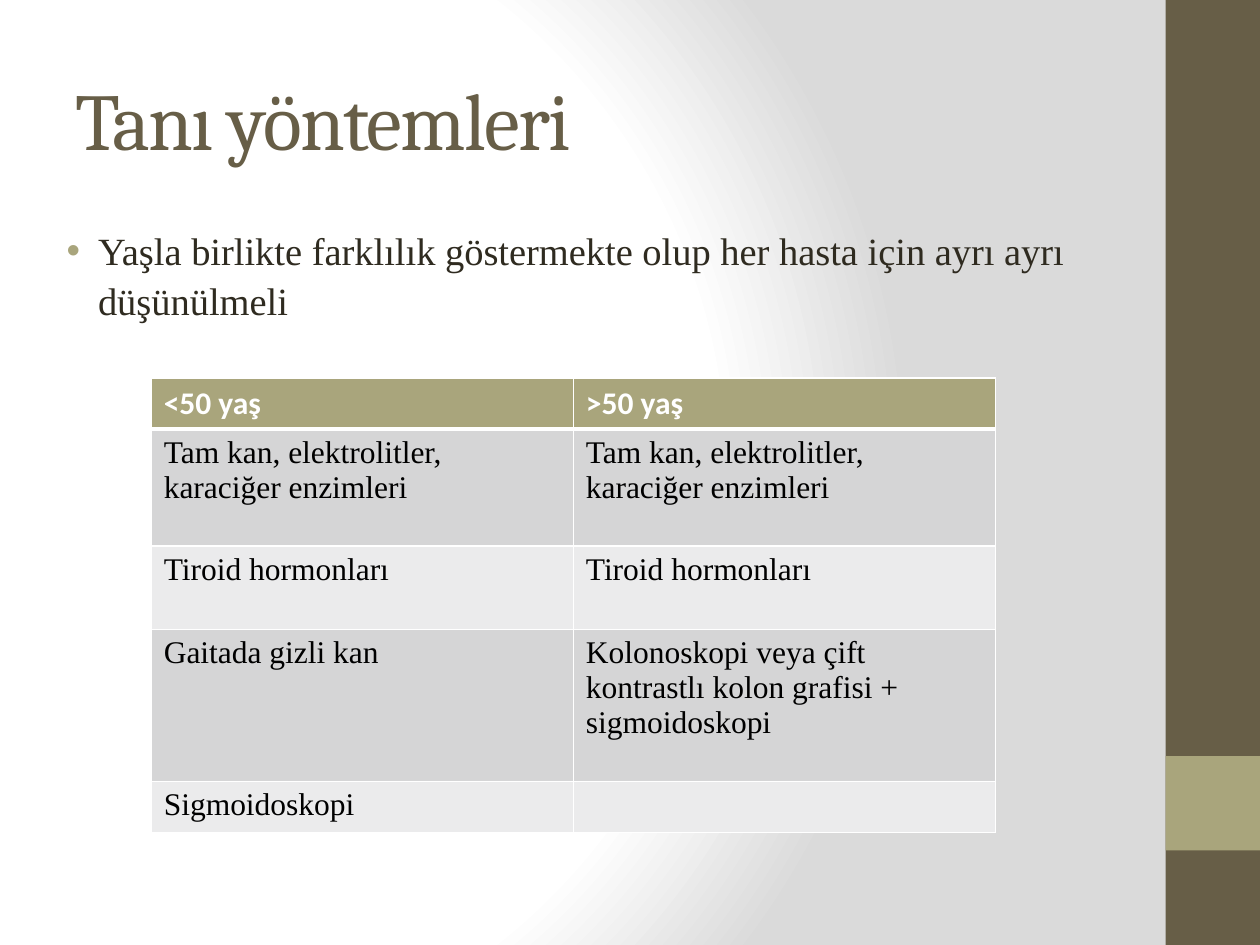
from lxml import etree
from pptx import Presentation
from pptx import util as u
from pptx.dml.color import RGBColor
from pptx.enum import shapes, text
from pptx.oxml import ns

COLORS = {
    "white": "FFFFFF", "grey": "DADADA", "brown": "675E47", "olive": "A9A57C",
    "ink": "2F2B20", "black": "000000", "dark_band": "D5D5D6", "light_band": "EBEBEC",
}
SERIF = "Times New Roman"
TESTS = [
    ("<50 yaş", ">50 yaş"),
    ("Tam kan, elektrolitler, karaciğer enzimleri",) * 2,
    ("Tiroid hormonları",) * 2,
    ("Gaitada gizli kan", "Kolonoskopi veya çift kontrastlı kolon grafisi + sigmoidoskopi"),
    ("Sigmoidoskopi", ""),
]
ROW_SHARES = [0.054, 0.124, 0.088, 0.161, 0.054]


def add_xml(parent, tag, **attributes):
    return etree.SubElement(parent, ns.qn(tag), attributes)


def add_color(parent, color):
    add_xml(parent, "a:srgbClr", val=COLORS[color])


def write(frame, words, font=SERIF, size=18, color="black", bold=False, tracking=None):
    paragraph = frame.paragraphs[0]
    run = paragraph.add_run()
    run.text = words
    run.font.name, run.font.size, run.font.bold = font, u.Pt(size), bold
    run.font.color.rgb = RGBColor.from_string(COLORS[color])
    if tracking:
        run.font._element.set("spc", str(tracking * 100))
    return paragraph


class SlideBuilder:
    def __init__(self, deck):
        self.deck = deck
        self.slide = deck.slides.add_slide(deck.slide_layouts[6])

    def box(self, left, top, width, height):
        w, h = self.deck.slide_width, self.deck.slide_height
        return int(left * w), int(top * h), int(width * w), int(height * h)

    def background(self, stops):
        self.slide.background.fill.gradient()
        gradient = self.slide.element.xpath(".//p:bg//a:gradFill")[0]
        for child in list(gradient):
            gradient.remove(child)
        stop_list = add_xml(gradient, "a:gsLst")
        for position, color in stops:
            add_color(add_xml(stop_list, "a:gs", pos=str(position * 1000)), color)
        circle = add_xml(gradient, "a:path", path="circle")
        add_xml(circle, "a:fillToRect", l="20000", t="50000", r="100000", b="50000")

    def panel(self, *shares, color):
        panel = self.slide.shapes.add_shape(shapes.MSO_SHAPE.RECTANGLE, *self.box(*shares))
        panel.shadow.inherit = False
        panel.fill.solid()
        panel.fill.fore_color.rgb = RGBColor.from_string(COLORS[color])
        panel.line.fill.background()

    def text(self, *shares, words, anchor=text.MSO_ANCHOR.TOP, **style):
        frame = self.slide.shapes.add_textbox(*self.box(*shares)).text_frame
        frame.word_wrap = True
        frame.vertical_anchor = anchor
        return write(frame, words, **style)

    def bullet(self, *shares, **style):
        paragraph = self.text(*shares, **style)
        paragraph.line_spacing = 1.08
        properties = paragraph._p.get_or_add_pPr()
        properties.set("marL", str(u.Inches(0.38)))
        properties.set("indent", str(u.Inches(-0.25)))
        add_color(add_xml(properties, "a:buClr"), "olive")
        add_xml(properties, "a:buFont", typeface="Arial")
        add_xml(properties, "a:buChar", char="•")

    def cell(self, cell, words, row):
        header = row == 0
        fill = "olive" if header else "dark_band" if row % 2 else "light_band"
        if words:
            style = dict(font="Calibri", color="white", bold=True) if header else {}
            write(cell.text_frame, words, **style)
        properties = cell._tc.get_or_add_tcPr()
        thick = {0: "a:lnB", 1: "a:lnT"}.get(row)
        for side in ("a:lnL", "a:lnR", "a:lnT", "a:lnB"):
            width = u.Pt(3 if side == thick else 1)
            border = add_xml(properties, side, w=str(width))
            add_color(add_xml(border, "a:solidFill"), "white")
        cell.fill.solid()
        cell.fill.fore_color.rgb = RGBColor.from_string(COLORS[fill])

    def table(self, left, top, width, rows, row_shares):
        area = self.box(left, top, width, sum(row_shares))
        table = self.slide.shapes.add_table(len(rows), len(rows[0]), *area).table
        for r, (words_in_row, share) in enumerate(zip(rows, row_shares)):
            table.rows[r].height = int(share * self.deck.slide_height)
            for c, words in enumerate(words_in_row):
                self.cell(table.cell(r, c), words, r)


def main():
    deck = Presentation()
    deck.slide_width, deck.slide_height = u.Inches(10), u.Inches(7.5)
    page = SlideBuilder(deck)
    page.background([(0, "white"), (75, "white"), (100, "grey")])
    page.panel(0.925, 0, 0.075, 1, color="brown")
    page.panel(0.925, 0.8, 0.075, 0.1, color="olive")
    page.text(0.05, 0.04, 0.83, 0.17, words="Tanı yöntemleri", anchor=text.MSO_ANCHOR.MIDDLE,
              font="Cambria", size=46, color="brown", tracking=-1)
    page.bullet(0.03, 0.23, 0.94, 0.68, size=22, color="ink",
                words="Yaşla birlikte farklılık göstermekte olup her hasta için ayrı ayrı düşünülmeli")
    page.table(0.12, 0.4, 0.67, TESTS, ROW_SHARES)
    deck.save("out.pptx")


if __name__ == "__main__":
    main()
